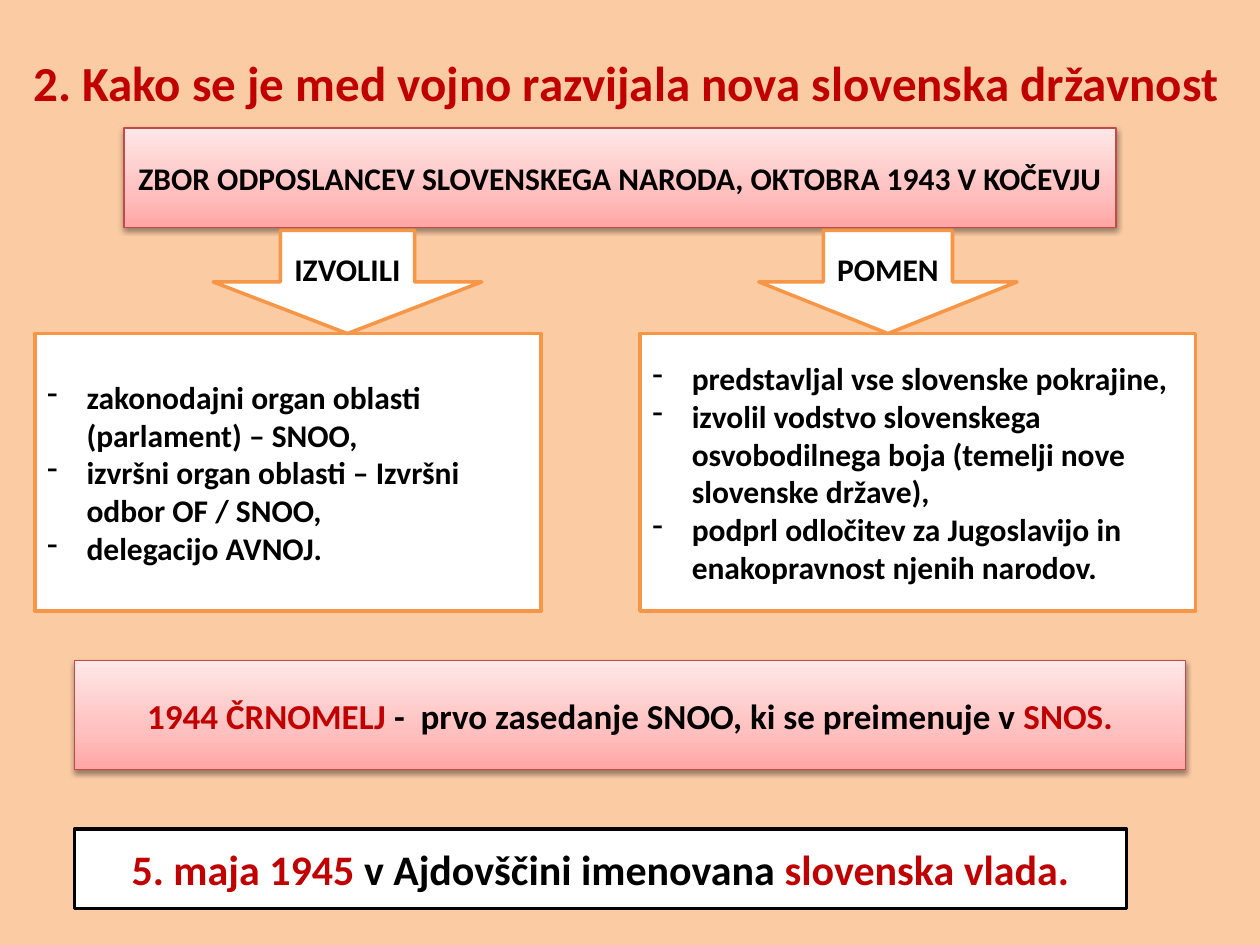
from copy import deepcopy

from lxml import etree
from pptx import Presentation
from pptx.dml.color import RGBColor
from pptx.enum.shapes import MSO_SHAPE
from pptx.enum.text import MSO_ANCHOR, PP_ALIGN
from pptx.oxml.ns import qn
from pptx.util import Pt

RECTANGLE = MSO_SHAPE.RECTANGLE
DOWN_ARROW = MSO_SHAPE.DOWN_ARROW
MIDDLE = MSO_ANCHOR.MIDDLE
CENTER = PP_ALIGN.CENTER
LEFT = PP_ALIGN.LEFT

PEACH = RGBColor(0xFB, 0xCB, 0xA4)
RED = RGBColor(0xC0, 0x00, 0x00)
BLACK = RGBColor(0x00, 0x00, 0x00)
WHITE = RGBColor(0xFF, 0xFF, 0xFF)
ORANGE = RGBColor(0xF7, 0x96, 0x46)
BRICK = RGBColor(0xBF, 0x4C, 0x48)
PINK_STOPS = (
    (0, RGBColor(0xFF, 0xA6, 0xA5)),
    (0.35, RGBColor(0xFF, 0xC0, 0xBF)),
    (1, RGBColor(0xFF, 0xE7, 0xE7)),
)


class StatehoodSlide:
    """Draws the titles, boxes, arrows and banners of the slide in one style."""

    font_name = "Calibri"
    hanging = Pt(22.5)

    def __init__(self, presentation):
        self.slide = presentation.slides.add_slide(presentation.slide_layouts[6])
        background = self.slide.background.fill
        background.solid()
        background.fore_color.rgb = PEACH

    def set_text(self, shape, paragraphs, size, alignment=CENTER):
        frame = shape.text_frame
        frame.word_wrap = True
        frame.vertical_anchor = MIDDLE
        for index, runs in enumerate(paragraphs):
            paragraph = frame.add_paragraph() if index else frame.paragraphs[0]
            paragraph.alignment = alignment
            paragraph.font.name = self.font_name
            paragraph.font.size = Pt(size)
            paragraph.font.bold = True
            paragraph.font.color.rgb = runs[0][1]
            for text, color in runs:
                run = paragraph.add_run()
                run.text = text
                if len(runs) > 1:
                    run.font.color.rgb = color

    def title(self, box, text):
        shape = self.slide.shapes.add_textbox(*map(Pt, box))
        self.set_text(shape, [[(text, RED)]], 28)

    def panel(self, box, line_color, kind=RECTANGLE, line_width=2):
        shape = self.slide.shapes.add_shape(kind, *map(Pt, box))
        shape.shadow.inherit = False
        shape.fill.solid()
        shape.fill.fore_color.rgb = WHITE
        shape.line.color.rgb = line_color
        shape.line.width = Pt(line_width)
        return shape

    def label(self, box, runs, size, line_color, kind=RECTANGLE):
        self.set_text(self.panel(box, line_color, kind), [runs], size)

    def bullets(self, box, items):
        shape = self.panel(box, ORANGE)
        self.set_text(shape, [[(item, BLACK)] for item in items], 18, LEFT)
        for paragraph in shape.text_frame.paragraphs:
            properties = paragraph._p.get_or_add_pPr()
            properties.set("marL", str(self.hanging))
            properties.set("indent", str(-self.hanging))
            bullet = etree.Element(qn("a:buChar"), char="-")
            properties.find(qn("a:defRPr")).addprevious(bullet)

    def banner(self, box, runs, size):
        shape = self.panel(box, BRICK, line_width=0.75)
        shape.fill.gradient()
        shape.fill.gradient_angle = 90
        stop_list = shape._element.spPr.find(".//" + qn("a:gsLst"))
        stop_list.append(deepcopy(stop_list[0]))
        for stop, (position, color) in zip(shape.fill.gradient_stops, PINK_STOPS):
            stop.position = position
            stop.color.rgb = color
        self.cast_shadow(shape)
        self.set_text(shape, [runs], size)

    def cast_shadow(self, shape):
        effects = shape._element.spPr.find(qn("a:effectLst"))
        shadow = etree.SubElement(
            effects, qn("a:outerShdw"), blurRad=str(Pt(3.1)), dist=str(Pt(1.6)),
            dir="5400000", rotWithShape="0")
        color = etree.SubElement(shadow, qn("a:srgbClr"), val=str(BLACK))
        etree.SubElement(color, qn("a:alpha"), val="38000")


def main():
    presentation = Presentation()
    presentation.slide_width = Pt(720)
    presentation.slide_height = Pt(540)
    slide = StatehoodSlide(presentation)

    slide.title((8.5, 21.6, 698, 50),
                "2. Kako se je med vojno razvijala nova slovenska državnost")
    slide.banner(
        (70.8, 73.2, 567, 56.7),
        [("ZBOR ODPOSLANCEV SLOVENSKEGA NARODA, OKTOBRA 1943 V KOČEVJU", BLACK)], 18)

    slide.bullets((19.9, 190.6, 289.2, 158.6), [
        "zakonodajni organ oblasti (parlament) – SNOO,",
        "izvršni organ oblasti – Izvršni odbor OF / SNOO,",
        "delegacijo AVNOJ.",
    ])
    slide.bullets((365.7, 190.6, 317.5, 158.6), [
        "predstavljal vse slovenske pokrajine,",
        "izvolil vodstvo slovenskega osvobodilnega boja (temelji nove slovenske države),",
        "podprl odločitev za Jugoslavijo in enakopravnost njenih narodov.",
    ])
    for left, width, text in ((121.8, 153.5, "IZVOLILI"), (433.6, 147.6, "POMEN")):
        slide.label((left, 131.6, width, 59), [(text, BLACK)], 18, ORANGE, DOWN_ARROW)

    slide.banner((42.5, 377.3, 635, 62.6), [
        ("1944 ČRNOMELJ ", RED),
        ("-  prvo zasedanje SNOO, ki se preimenuje v ", BLACK),
        ("SNOS.", RED),
    ], 20)
    slide.label((42.5, 473.8, 601.2, 45.4), [
        ("5. maja 1945 ", RED),
        ("v Ajdovščini imenovana", BLACK),
        (" slovenska vlada.", RED),
    ], 24, BLACK)

    presentation.save("out.pptx")


if __name__ == "__main__":
    main()
